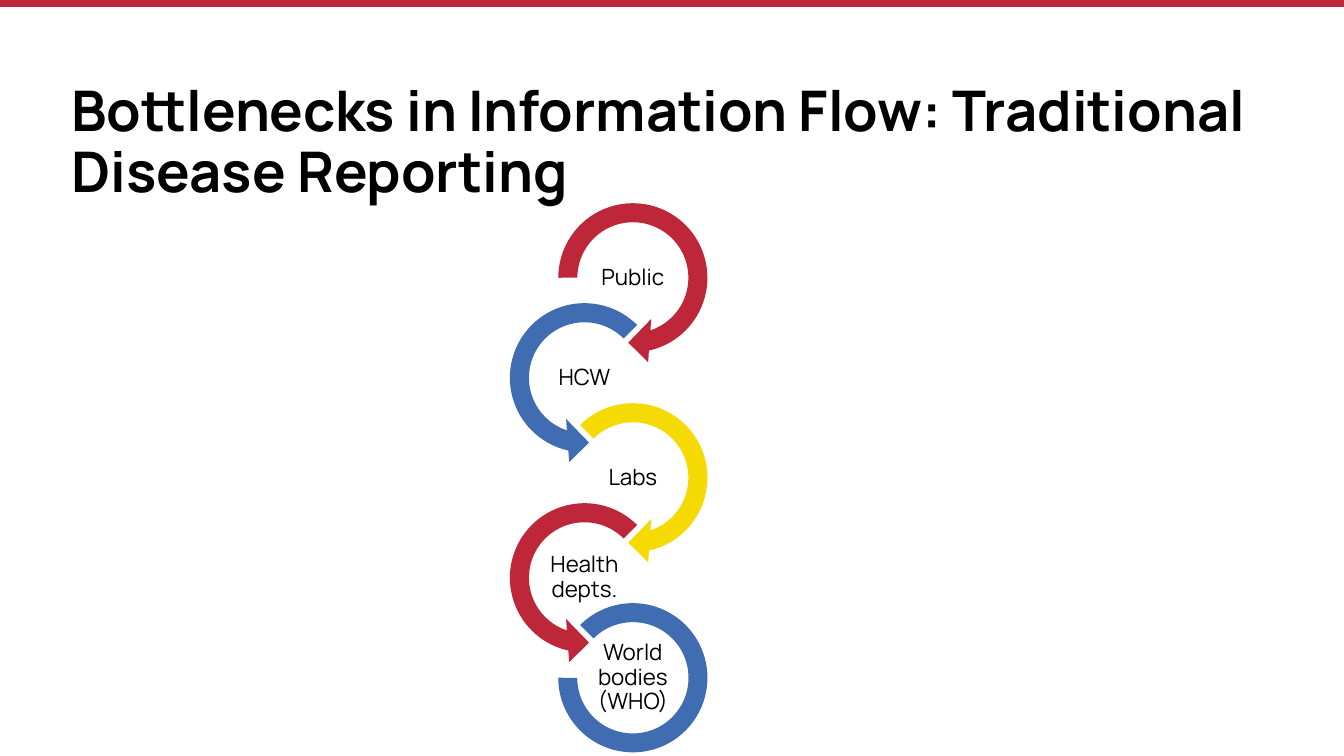
from dataclasses import dataclass

from lxml.etree import SubElement
from pptx import Presentation
from pptx.dml.color import RGBColor
from pptx.enum.shapes import MSO_CONNECTOR, MSO_SHAPE
from pptx.enum.text import MSO_ANCHOR, MSO_AUTO_SIZE, PP_ALIGN
from pptx.oxml.ns import qn
from pptx.util import Cm, Pt

FONT = "Manrope"
RED, BLUE, YELLOW, BLACK = "BE2739", "406CB2", "F6DA04", "000000"
SLIDE_WIDTH, SLIDE_HEIGHT = 33.87, 19.05

# Geometry of the chain, in centimetres
RIGHT_CENTER, LEFT_CENTER = 15.95, 14.73
FIRST_CENTER, STEP_PITCH = 7.0, 2.52
ARROW_SIZE, ARC_SIZE = 4.37, 3.76
LABEL_WIDTH, LABEL_HEIGHT = 2.44, 1.22


@dataclass(frozen=True)
class Ring:
    preset: MSO_SHAPE
    center: float
    size: float
    adjustments: tuple[float, ...]


@dataclass(frozen=True)
class Step:
    label: str
    color: str
    ring: Ring


def right_arrow(start: float) -> Ring:
    return Ring(MSO_SHAPE.CIRCULAR_ARROW, RIGHT_CENTER, ARROW_SIZE,
                (0.11, 11.423, 45, start, 0.125))


LEFT_ARROW = Ring(MSO_SHAPE.LEFT_CIRCULAR_ARROW, LEFT_CENTER, ARROW_SIZE,
                  (0.11, 11.423, 63, 189, 0.125))
END_ARC = Ring(MSO_SHAPE.BLOCK_ARC, RIGHT_CENTER, ARC_SIZE, (135, 108, 0.127))

STEPS = (
    Step("Public", RED, right_arrow(108)),
    Step("HCW", BLUE, LEFT_ARROW),
    Step("Labs", YELLOW, right_arrow(135)),
    Step("Health depts.", RED, LEFT_ARROW),
    Step("World bodies (WHO)", BLUE, END_ARC),
)


def color(value: str) -> RGBColor:
    return RGBColor.from_string(value)


def write_text(shape, text: str, *, size: float, bold: bool = False,
               alignment=PP_ALIGN.LEFT, margin: float | None = None) -> None:
    frame = shape.text_frame
    frame.text = text
    frame.word_wrap = True
    frame.auto_size = MSO_AUTO_SIZE.NONE
    frame.vertical_anchor = MSO_ANCHOR.MIDDLE
    if margin is not None:
        frame.margin_left = frame.margin_right = Cm(margin)
        frame.margin_top = frame.margin_bottom = Cm(margin)
    paragraph = frame.paragraphs[0]
    paragraph.alignment = alignment
    paragraph.line_spacing = 0.9
    font = paragraph.runs[0].font
    font.name, font.size, font.bold = FONT, Pt(size), bold
    font.color.rgb = color(BLACK)


def add_top_rule(slide) -> None:
    rule = slide.shapes.add_connector(
        MSO_CONNECTOR.STRAIGHT, 0, Cm(0.08), Cm(SLIDE_WIDTH), Cm(0.08))
    rule.line.color.rgb = color("BE273A")
    rule.line.width = Pt(6)
    SubElement(rule._element.spPr, qn("a:effectLst"))


def add_title(slide, text: str) -> None:
    title = slide.shapes.title
    title.left, title.top = Cm(1.55), Cm(1.78)
    title.width, title.height = Cm(30.66), Cm(3.68)
    write_text(title, text, size=40, bold=True)


def add_step(slide, step: Step, center_y: float) -> None:
    ring = step.ring
    shape = slide.shapes.add_shape(
        ring.preset, Cm(ring.center - ring.size / 2), Cm(center_y - ring.size / 2),
        Cm(ring.size), Cm(ring.size))
    for index, value in enumerate(ring.adjustments):
        shape.adjustments[index] = value
    shape.shadow.inherit = False
    shape.fill.solid()
    shape.fill.fore_color.rgb = color(step.color)
    shape.line.fill.background()

    label = slide.shapes.add_textbox(
        Cm(ring.center - LABEL_WIDTH / 2), Cm(center_y - LABEL_HEIGHT / 2),
        Cm(LABEL_WIDTH), Cm(LABEL_HEIGHT))
    write_text(label, step.label, size=16, alignment=PP_ALIGN.CENTER, margin=0.03)


def main() -> None:
    presentation = Presentation()
    presentation.slide_width = Cm(SLIDE_WIDTH)
    presentation.slide_height = Cm(SLIDE_HEIGHT)
    slide = presentation.slides.add_slide(presentation.slide_layouts[5])

    # Heading
    add_top_rule(slide)
    add_title(slide, "Bottlenecks in Information Flow: Traditional Disease Reporting")

    # Reporting chain, alternating right and left
    for index, step in enumerate(STEPS):
        add_step(slide, step, FIRST_CENTER + index * STEP_PITCH)

    presentation.save("out.pptx")


if __name__ == "__main__":
    main()
